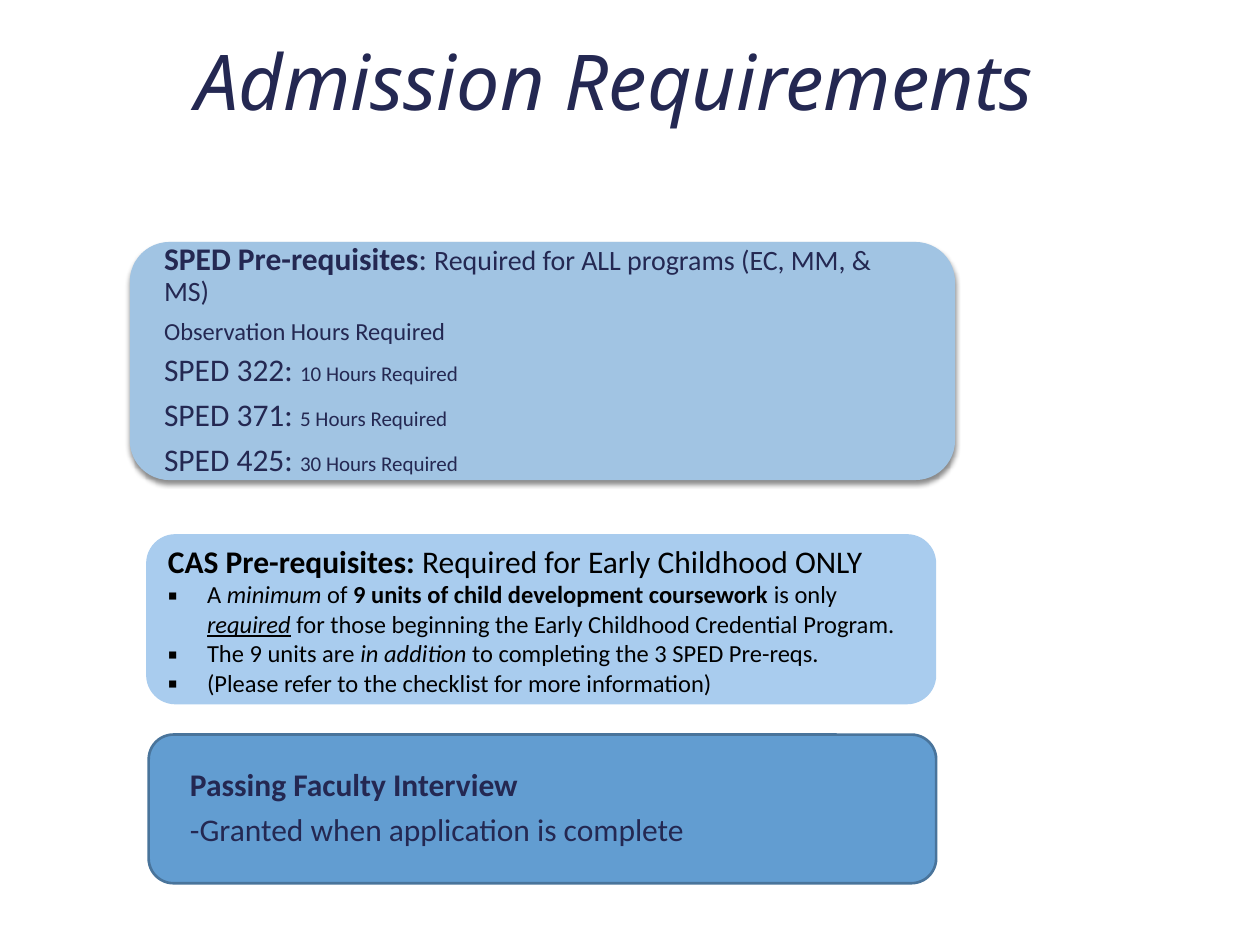
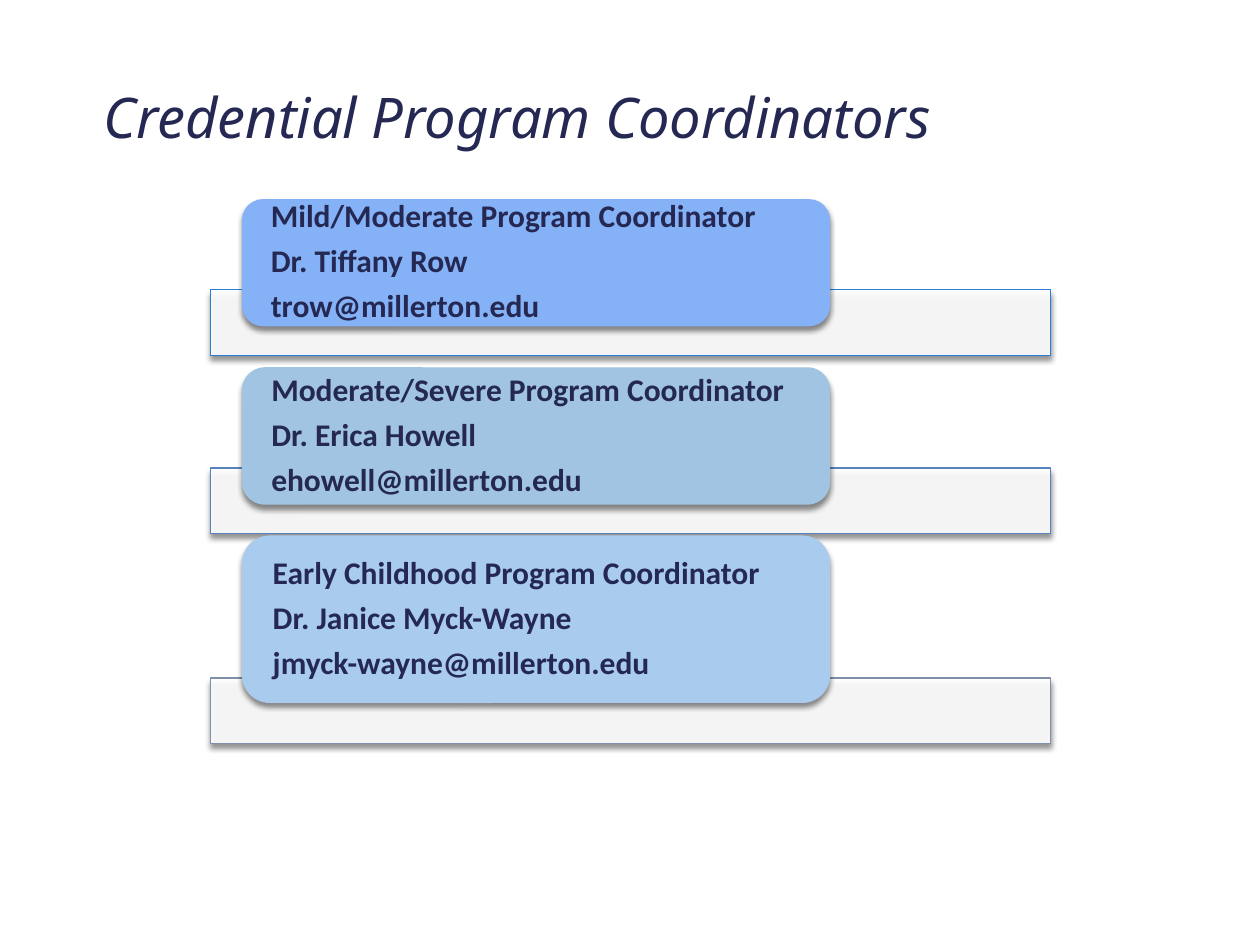
from dataclasses import dataclass

from pptx import Presentation
from pptx.dml.color import RGBColor
from pptx.enum import shapes, text
from pptx.oxml import ns, xmlchemy
from pptx.util import Inches, Pt


@dataclass(frozen=True)
class Theme:
    navy: str = "242852"
    black: str = "000000"
    white: str = "FFFFFF"
    periwinkle: str = "85B2F6"
    steel: str = "A1C4E3"
    sky: str = "A9CCEE"
    blue: str = "629DD1"
    blue_edge: str = "49749B"
    bar_edges: tuple = ("297FD5", "5683BD", "7F8FA9")
    title_font: str = "Noto Sans"
    body_font: str = "Calibri"
    title_large: int = 44
    title_small: int = 32
    heading: int = 18
    subheading: int = 16
    body: int = 14
    detail: int = 12


THEME = Theme()
ROUNDED = shapes.MSO_SHAPE.ROUNDED_RECTANGLE


def add_xml(parent, tag, **attributes):
    child = xmlchemy.OxmlElement(tag)
    for key, value in attributes.items():
        child.set(key, str(value))
    parent.append(child)
    return child


def add_box(slide, kind, box, fill, edge=None, edge_width=1.5, shadow=False):
    shape = slide.shapes.add_shape(kind, *map(Inches, box))
    shape.fill.solid()
    shape.fill.fore_color.rgb = RGBColor.from_string(fill)
    if edge:
        shape.line.color.rgb = RGBColor.from_string(edge)
        shape.line.width = Pt(edge_width)
    else:
        shape.line.fill.background()
    shape.shadow.inherit = False
    if shadow:
        effects = shape.element.spPr.find(ns.qn("a:effectLst"))
        outer = add_xml(effects, "a:outerShdw", blurRad=Pt(3), dist=Pt(2.4),
                        dir=90 * 60000, rotWithShape=0)
        add_xml(add_xml(outer, "a:srgbClr", val=THEME.black), "a:alpha", val=45000)
    return shape


def add_run(paragraph, words, size, color, font, style=""):
    """Style letters: b bold, i italic, u underlined."""
    run = paragraph.add_run()
    run.text = words
    run.font.name = font
    run.font.size = Pt(size)
    run.font.color.rgb = RGBColor.from_string(color)
    run.font.bold = "b" in style
    run.font.italic = "i" in style
    run.font.underline = "u" in style


def write(shape, paragraphs, color=THEME.navy, inset=0.18, spaced=True):
    """Each paragraph is a list of (words, size, style) runs."""
    frame = shape.text_frame
    frame.word_wrap = True
    frame.vertical_anchor = text.MSO_ANCHOR.MIDDLE
    frame.margin_left = frame.margin_right = Inches(inset)
    frame.margin_top = frame.margin_bottom = 0
    for index, runs in enumerate(paragraphs):
        paragraph = frame.add_paragraph() if index else frame.paragraphs[0]
        paragraph.alignment = text.PP_ALIGN.LEFT
        if spaced:
            paragraph.line_spacing = 0.9
            paragraph.space_after = Pt(0.35 * max(size for _, size, _ in runs))
        for words, size, style in runs:
            add_run(paragraph, words, size, color, THEME.body_font, style)


def add_bullet(paragraph):
    properties = paragraph._p.get_or_add_pPr()
    properties.set("marL", str(Inches(0.31)))
    properties.set("indent", str(Inches(-0.31)))
    add_xml(properties, "a:buFont", typeface=THEME.title_font)
    add_xml(properties, "a:buChar", char="▪")


def add_titled_slide(deck, title, box, size):
    slide = deck.slides.add_slide(deck.slide_layouts[5])
    heading = slide.shapes.title
    heading.left, heading.top, heading.width, heading.height = map(Inches, box)
    frame = heading.text_frame
    frame.auto_size = text.MSO_AUTO_SIZE.NONE
    frame.vertical_anchor = text.MSO_ANCHOR.MIDDLE
    frame.paragraphs[0].alignment = text.PP_ALIGN.LEFT
    add_run(frame.paragraphs[0], title, size, THEME.navy, THEME.title_font, "i")
    return slide


# Admission requirements: three stacked panels
def add_sped_panel(slide, box):
    panel = add_box(slide, ROUNDED, box, THEME.steel, shadow=True)
    courses = [("322", 10), ("371", 5), ("425", 30)]
    write(panel, [
        [("SPED Pre-requisites", THEME.heading, "b"), (": ", THEME.heading, ""),
         ("Required for ALL programs (EC, MM, & MS)", THEME.subheading, "")],
        [("Observation Hours Required", THEME.body, "")],
        *([(f"SPED {number}: ", THEME.heading, ""),
           (f"{hours} Hours Required", THEME.detail, "")]
          for number, hours in courses),
    ])


def add_cas_panel(slide, box):
    panel = add_box(slide, ROUNDED, box, THEME.sky, THEME.sky)
    size = THEME.body
    write(panel, [
        [("CAS Pre-requisites: ", THEME.heading, "b"),
         ("Required for Early Childhood ONLY", THEME.heading, "")],
        [("A ", size, ""), ("minimum ", size, "i"), ("of ", size, ""),
         ("9 units of child development coursework ", size, "b"),
         ("is only ", size, ""), ("required", size, "iu"),
         (" for those beginning the Early Childhood Credential Program.", size, "")],
        [("The 9 units are ", size, ""), ("in addition", size, "i"),
         (" to completing the 3 SPED Pre-reqs.", size, "")],
        [("(Please refer to the checklist for more information)", size, "")],
    ], color=THEME.black, inset=0.1, spaced=False)
    for paragraph in panel.text_frame.paragraphs[1:]:
        add_bullet(paragraph)


def add_interview_panel(slide, box):
    panel = add_box(slide, ROUNDED, box, THEME.blue, THEME.blue_edge)
    write(panel, [
        [("Passing Faculty Interview", THEME.heading, "b")],
        [("-Granted when application is complete", THEME.heading, "")],
    ], inset=0.27)


def build_requirements(deck):
    slide = add_titled_slide(deck, "Admission Requirements",
                             (1.45, 0.17, 8.05, 0.92), THEME.title_large)
    add_sped_panel(slide, (1.03, 1.92, 6.55, 1.89))
    add_cas_panel(slide, (1.17, 4.25, 6.25, 1.33))
    add_interview_panel(slide, (1.18, 5.83, 6.25, 1.18))


# Coordinators: a contact card over a bar, once per program
def add_coordinator(slide, box, bar_drop, fill, edge, lines):
    left, top, width, height = box
    bar = add_box(slide, shapes.MSO_SHAPE.RECTANGLE,
                  (left, top + bar_drop, width, 0.52),
                  THEME.white, edge, 0.79, shadow=True)
    bar_color = bar.element.spPr.find(ns.qn("a:solidFill"))[0]
    add_xml(bar_color, "a:alpha", val=90000)
    card = add_box(slide, ROUNDED, (left + 0.25, top, 0.7 * width, height),
                   fill, shadow=True)
    write(card, [[(line, THEME.heading, "b")] for line in lines])


def build_coordinators(deck):
    slide = add_titled_slide(deck, "Credential Program Coordinators",
                             (0.72, 0.3, 8.28, 1.25), THEME.title_small)
    coordinators = [
        (1.01, 0.72, THEME.periwinkle, "Mild/Moderate", "Tiffany Row", "trow"),
        (1.09, 1.8 - 1, THEME.steel, "Moderate/Severe", "Erica Howell", "ehowell"),
        (1.33, 1.13, THEME.sky, "Early Childhood", "Janice Myck-Wayne",
         "jmyck-wayne"),
    ]
    for row, (height, drop, fill, program, name, mailbox) in enumerate(coordinators):
        add_coordinator(slide, (1.67, 1.58 + 1.335 * row, 6.67, height), drop,
                        fill, THEME.bar_edges[row],
                        [f"{program} Program Coordinator", f"Dr. {name}",
                         f"{mailbox}@millerton.edu"])


def main():
    deck = Presentation()
    deck.slide_width, deck.slide_height = Inches(10), Inches(7.5)
    build_requirements(deck)
    build_coordinators(deck)
    deck.save("out.pptx")


if __name__ == "__main__":
    main()
